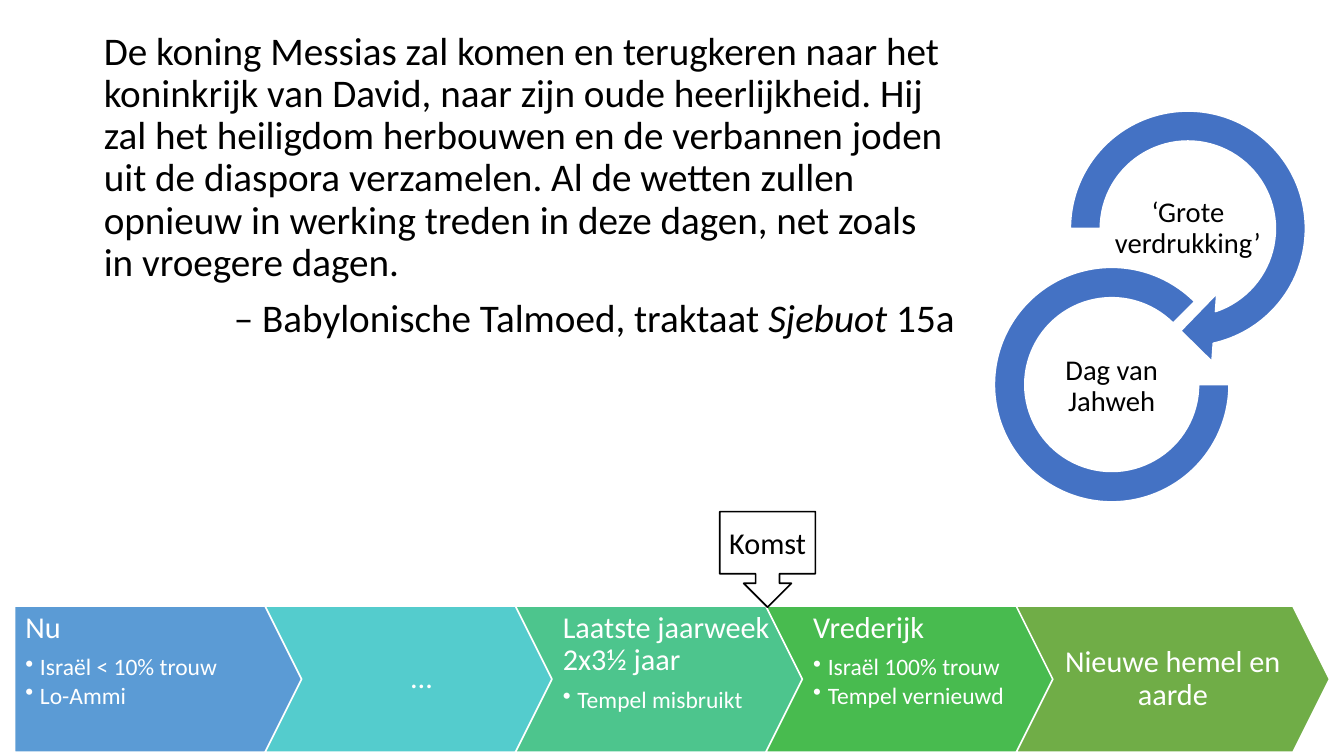
"""Build the slide on the coming of the Messiah with a timeline of five eras."""
from lxml.etree import SubElement
from pptx import Presentation
from pptx.dml.color import RGBColor
from pptx.enum.shapes import MSO_SHAPE
from pptx.enum.text import MSO_ANCHOR, PP_ALIGN
from pptx.oxml.ns import qn
from pptx.util import Inches, Pt

WHITE, BLACK, RING_BLUE = "FFFFFF", "000000", "4472C4"
ERA_LEFT, ERA_TOP, ERA_STEP = 0.12, 5.01, 2.07
ERA_WIDTH, ERA_HEIGHT = 2.59, 1.21


def add_shape(kind, place, fill, line, adjustments=()):
    """Add a preset shape with a plain fill and a thin outline."""
    shape = page.shapes.add_shape(kind, *map(Inches, place))
    shape.shadow.inherit = False
    shape.fill.solid()
    shape.fill.fore_color.rgb = RGBColor.from_string(fill)
    shape.line.color.rgb = RGBColor.from_string(line)
    shape.line.width = Pt(1)
    for index, value in enumerate(adjustments):
        shape.adjustments[index] = value
    return shape


def set_text(shape, text, size, color, align, anchor, margins, spacing=0.9):
    """Put text in a shape and format its paragraphs."""
    frame = shape.text_frame
    frame.word_wrap = True
    frame.vertical_anchor = anchor
    (frame.margin_left, frame.margin_top,
     frame.margin_right, frame.margin_bottom) = map(Inches, margins)
    frame.text = text
    for para in frame.paragraphs:
        para.alignment = align
        para.line_spacing = spacing
        for span in para.runs:
            span.font.size = Pt(size)
            span.font.name = "Calibri"
            span.font.color.rgb = RGBColor.from_string(color)
    return frame


deck = Presentation()
deck.slide_width, deck.slide_height = Inches(11.11), Inches(6.25)
page = deck.slides.add_slide(deck.slide_layouts[6])

add_shape(MSO_SHAPE.CIRCULAR_ARROW, (8.69, 0.76, 2.26, 2.26), RING_BLUE, WHITE,
          (0.11, 11.42, 45, 108, 1 / 8))
add_shape(MSO_SHAPE.BLOCK_ARC, (8.22, 2.21, 1.94, 1.94), RING_BLUE, WHITE,
          (0, 189, 0.13))
for label, left, top in (("‘Grote verdrukking’", 9.19, 1.58),
                         ("Dag van Jahweh", 8.56, 2.88)):
    box = page.shapes.add_textbox(*map(Inches, (left, top, 1.26, 0.63)))
    set_text(box, label, 17, BLACK, PP_ALIGN.CENTER, MSO_ANCHOR.MIDDLE, [0.01] * 4)

eras = [
    ("Nu", ["Israël < 10% trouw", "Lo-Ammi"], "5B9BD5"),
    ("…", [], "54CCCD"),
    ("Laatste jaarweek\v2x3½ jaar", ["Tempel misbruikt"], "4DC58D"),
    ("Vrederijk", ["Israël 100% trouw", "Tempel vernieuwd"], "48BB4F"),
    ("Nieuwe hemel en aarde", [], "70AD47"),
]
for column, (heading, points, fill) in enumerate(eras):
    kind = MSO_SHAPE.CHEVRON if column else MSO_SHAPE.PENTAGON
    place = (ERA_LEFT + column * ERA_STEP, ERA_TOP, ERA_WIDTH, ERA_HEIGHT)
    era = add_shape(kind, place, fill, WHITE, [0.25])
    align = PP_ALIGN.LEFT if points else PP_ALIGN.CENTER
    anchor = MSO_ANCHOR.TOP if points else MSO_ANCHOR.MIDDLE
    margins = (0.09, 0.05, 0.09 if column else 0.37, 0.05)
    frame = set_text(era, heading, 18, WHITE, align, anchor, margins)
    frame.paragraphs[0].space_after = Pt(6.3)
    for point in points:
        para = frame.add_paragraph()
        para.text = point
        para.level = 1
        properties = para._p.get_or_add_pPr()
        properties.set("marL", str(Inches(0.12)))
        properties.set("indent", str(-Inches(0.12)))
        SubElement(properties, qn("a:buChar"), char="•")
        para.alignment = PP_ALIGN.LEFT
        para.line_spacing = 0.9
        para.space_after = Pt(2.1)
        span = para.runs[0]
        span.font.size = Pt(14)
        span.font.name = "Calibri"
        span.font.color.rgb = RGBColor.from_string(WHITE)

quote = (
    "De koning Messias zal komen en terugkeren naar het koninkrijk van David, "
    "naar zijn oude heerlijkheid. Hij zal het heiligdom herbouwen en de verbannen "
    "joden uit de diaspora verzamelen. Al de wetten zullen opnieuw in werking "
    "treden in deze dagen, net zoals in vroegere dagen."
)
box = page.shapes.add_textbox(*map(Inches, (0.76, 0.21, 7.23, 4.8)))
frame = set_text(box, quote, 23.3, BLACK, PP_ALIGN.LEFT, MSO_ANCHOR.TOP,
                 (0.1, 0.05, 0.1, 0.05))
citation = frame.add_paragraph()
citation.alignment = PP_ALIGN.RIGHT
citation.line_spacing = 0.9
citation.space_before = Pt(8.3)
for part in ("– Babylonische Talmoed, traktaat ", "Sjebuot", " 15a"):
    span = citation.add_run()
    span.text = part
    span.font.size = Pt(23.3)
    span.font.name = "Calibri"
    span.font.italic = part == "Sjebuot"
    span.font.color.rgb = RGBColor.from_string(BLACK)

coming = add_shape(MSO_SHAPE.DOWN_ARROW_CALLOUT, (5.95, 4.23, 0.79, 0.79), WHITE, BLACK)
set_text(coming, "Komst", 18, BLACK, PP_ALIGN.CENTER, MSO_ANCHOR.MIDDLE, [0] * 4, 1.0)

deck.save("out.pptx")
